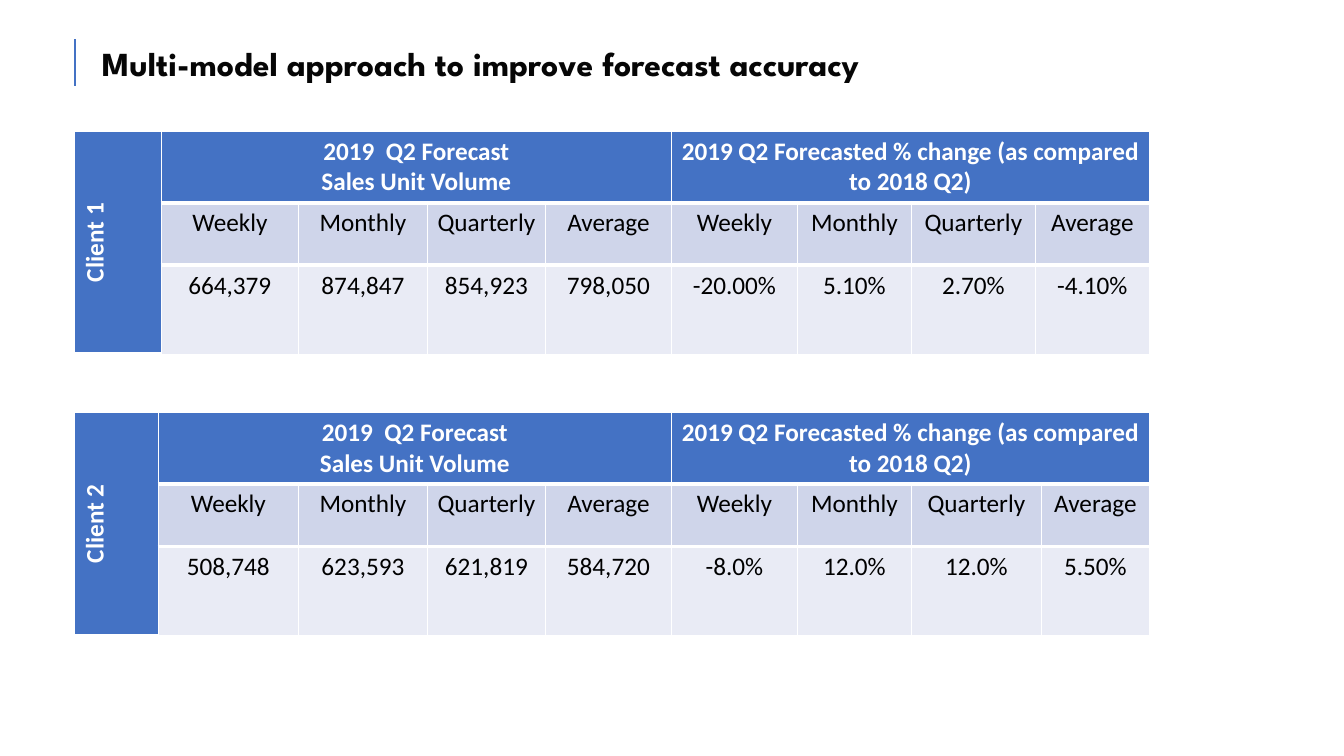
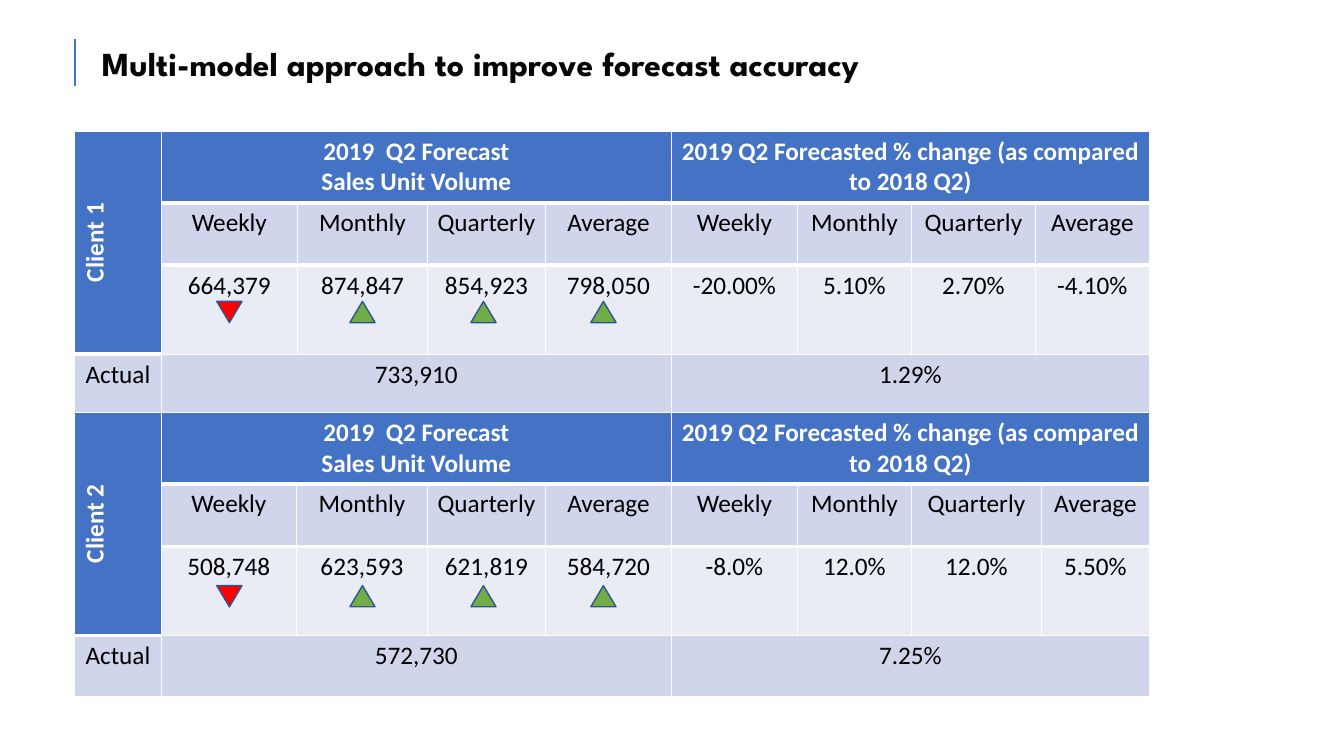
from dataclasses import dataclass

import pptx
import pptx.dml.color
import pptx.enum.shapes
import pptx.enum.text
import pptx.oxml
import pptx.util
from pptx.util import Inches

RGB = pptx.dml.color.RGBColor.from_string
ALIGN = pptx.enum.text.PP_ALIGN
SHAPE = pptx.enum.shapes.MSO_SHAPE
A_NS = 'xmlns:a="http://schemas.openxmlformats.org/drawingml/2006/main"'


@dataclass(frozen=True)
class Theme:
    accent: str = "4472C4"
    band_dark: str = "CFD5EA"
    band_light: str = "E9EBF5"
    white: str = "FFFFFF"
    black: str = "000000"
    title: str = "060606"
    up: str = "70AD47"
    down: str = "FF0000"
    marker_line: str = "325491"
    title_font: str = "League Spartan"
    body_font: str = "Calibri"
    title_size: int = 24
    body_size: int = 18
    heading_rule: int = 3


@dataclass(frozen=True)
class Client:
    name: str
    top: float
    marker_top: float
    volumes: tuple
    changes: tuple
    actual: int
    actual_change: str
    volume_widths: tuple
    review_widths: tuple
    change_widths: tuple


THEME = Theme()
TITLE = "Multi-model approach to improve forecast accuracy"
VOLUME_HEADING = "2019  Q2 Forecast\nSales Unit Volume"
CHANGE_HEADING = "2019 Q2 Forecasted % change (as compared to 2018 Q2)"
MODELS = ["Weekly", "Monthly", "Quarterly", "Average"]
LEFT = 0.74
ROW_HEIGHTS = [0.7, 0.62, 0.87, 0.61]
MARKER_LEFTS = [2.15, 3.47, 4.67, 5.86]
CLIENTS = [
    Client("Client 1", 1.3, 2.99, (664379, 874847, 854923, 798050),
           ("-20.00%", "5.10%", "2.70%", "-4.10%"), 733910, "1.29%",
           (0.86, 1.36, 1.28, 1.17, 1.25), (0.86, 1.35, 1.29, 1.17, 1.25),
           (1.25, 1.13, 1.23, 1.13)),
    Client("Client 2", 4.09, 5.81, (508748, 623593, 621819, 584720),
           ("-8.0%", "12.0%", "12.0%", "5.50%"), 572730, "7.25%",
           (0.83, 1.39, 1.28, 1.17, 1.25), (0.86, 1.34, 1.3, 1.17, 1.25),
           (1.25, 1.13, 1.29, 1.07)),
]


def style_font(font, name, size, color, bold):
    font.name = name
    font.size = pptx.util.Pt(size)
    font.bold = bold
    font.color.rgb = RGB(color)


def add_title(s):
    sp = s.shapes.title
    sp.left, sp.top = Inches(0.94), Inches(0.45)
    sp.width, sp.height = Inches(11.7), Inches(0.36)
    tf = sp.text_frame
    tf.auto_size = pptx.enum.text.MSO_AUTO_SIZE.NONE
    tf.vertical_anchor = pptx.enum.text.MSO_ANCHOR.MIDDLE
    tf.margin_left, tf.margin_right = Inches(0.07), 0
    tf.text = TITLE
    p = tf.paragraphs[0]
    p.alignment = ALIGN.LEFT
    style_font(p.runs[0].font, THEME.title_font, THEME.title_size, THEME.title, True)


def add_title_rule(s):
    line = s.shapes.add_connector(
        pptx.enum.shapes.MSO_CONNECTOR.STRAIGHT,
        Inches(LEFT), Inches(0.39), Inches(LEFT), Inches(0.85))
    line.line.color.rgb = RGB(THEME.accent)
    line.line.width = pptx.util.Pt(1.5)
    line._element.spPr.append(pptx.oxml.parse_xml(f"<a:effectLst {A_NS}/>"))


def set_heading_rule(cell, edge):
    width = pptx.util.Pt(THEME.heading_rule)
    cell._tc.get_or_add_tcPr().insert(0, pptx.oxml.parse_xml(
        f'<a:{edge} {A_NS} w="{width}"><a:solidFill>'
        f'<a:srgbClr val="{THEME.white}"/></a:solidFill></a:{edge}>'))


def format_cell(cell, fill, heading):
    cell.fill.solid()
    cell.fill.fore_color.rgb = RGB(fill)
    for p in cell.text_frame.paragraphs:
        p.alignment = ALIGN.CENTER
        for r in p.runs:
            style_font(r.font, THEME.body_font, THEME.body_size,
                       THEME.white if heading else THEME.black, heading)


def is_heading(i, j):
    return i == 0 or (j == 0 and i < 3)


def add_forecast_table(s, client, with_actual):
    rows = [
        [client.name, VOLUME_HEADING, "", "", "", CHANGE_HEADING, "", "", ""],
        ["", *MODELS, *MODELS],
        ["", *(f"{v:,}" for v in client.volumes), *client.changes],
    ]
    if with_actual:
        rows.append(["Actual", f"{client.actual:,}", "", "", "",
                     client.actual_change, "", "", ""])
    lead_widths = client.review_widths if with_actual else client.volume_widths
    widths = lead_widths + client.change_widths
    heights = ROW_HEIGHTS[:len(rows)]
    table = s.shapes.add_table(
        len(rows), len(widths), Inches(LEFT), Inches(client.top),
        Inches(sum(widths)), Inches(sum(heights))).table
    for column, width in zip(table.columns, widths):
        column.width = Inches(width)
    for row, height in zip(table.rows, heights):
        row.height = Inches(height)

    table.cell(0, 0).merge(table.cell(2, 0))
    for i in (0, 3)[:1 + with_actual]:
        for j in (1, 5):
            table.cell(i, j).merge(table.cell(i, j + 3))

    fills = [THEME.accent, THEME.band_dark, THEME.band_light, THEME.band_dark]
    for i, texts in enumerate(rows):
        for j, text in enumerate(texts):
            cell = table.cell(i, j)
            if text:
                cell.text_frame.text = text
            heading = is_heading(i, j)
            format_cell(cell, THEME.accent if heading else fills[i], heading)
            if heading:
                set_heading_rule(cell, "lnB")
            elif is_heading(i - 1, j):
                set_heading_rule(cell, "lnT")
    table.cell(0, 0)._tc.get_or_add_tcPr().set("vert", "vert270")


def add_marker(s, left, top, is_up):
    sp = s.shapes.add_shape(SHAPE.ISOSCELES_TRIANGLE, Inches(left), Inches(top),
                            Inches(0.25), Inches(0.21))
    sp.shadow.inherit = False
    sp.rotation = 0 if is_up else 180
    sp.fill.solid()
    sp.fill.fore_color.rgb = RGB(THEME.up if is_up else THEME.down)
    sp.line.color.rgb = RGB(THEME.marker_line)
    sp.line.width = pptx.util.Pt(1)


def add_forecast_slide(prs, with_actual):
    s = prs.slides.add_slide(prs.slide_layouts.get_by_name("Title Only"))
    add_title(s)
    add_title_rule(s)
    for client in CLIENTS:
        add_forecast_table(s, client, with_actual)
        if with_actual:
            for left, volume in zip(MARKER_LEFTS, client.volumes):
                add_marker(s, left, client.marker_top, volume > client.actual)


def main():
    prs = pptx.Presentation()
    prs.slide_width, prs.slide_height = Inches(13.33), Inches(7.5)
    for with_actual in (False, True):
        add_forecast_slide(prs, with_actual)
    prs.save("out.pptx")


if __name__ == "__main__":
    main()
